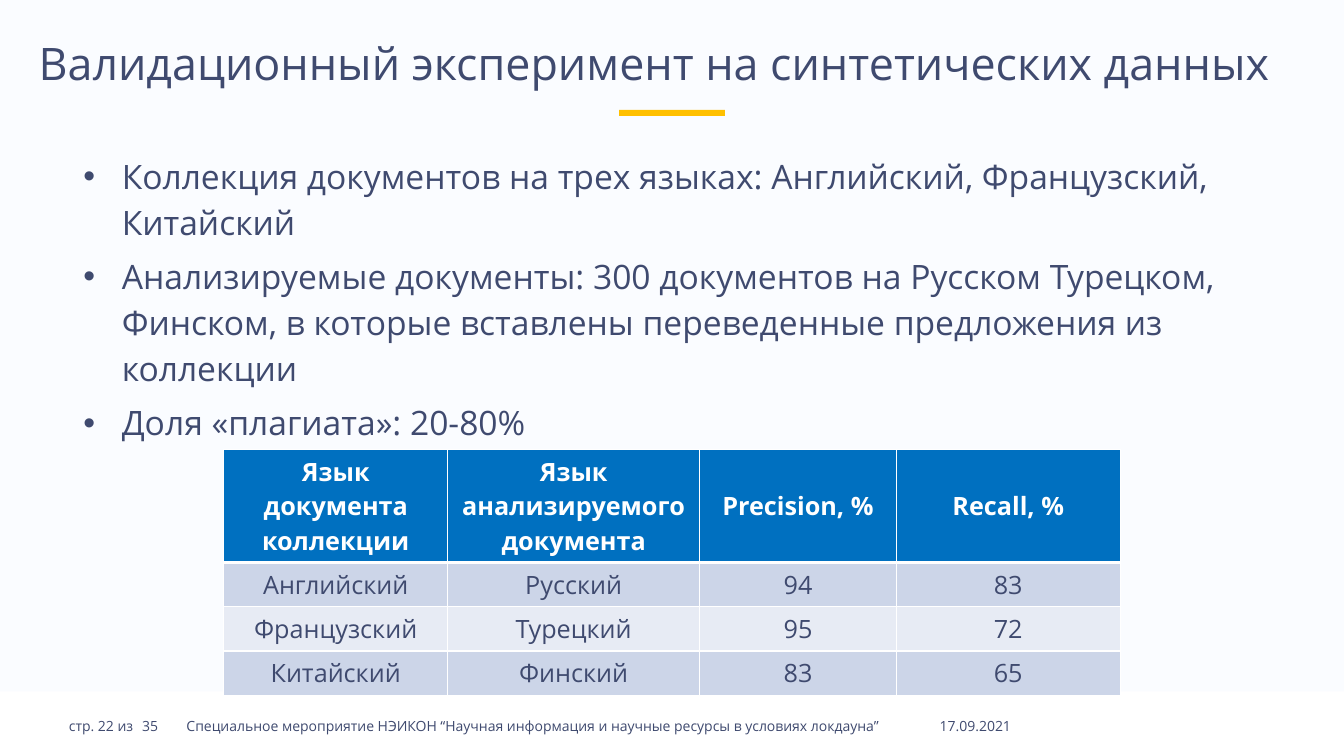
from lxml import etree
from pptx import Presentation
from pptx import util as u
from pptx.dml import color
from pptx.enum import shapes, text
from pptx.oxml import ns

NAVY, WHITE, BLUE, AMBER = "3F4A6F", "FFFFFF", "0070C0", "FFC000"
BACKGROUND, BANDS = "FAFCFF", ("CCD5E8", "E7EBF4")
LEFT, CENTER, RIGHT = text.PP_ALIGN.LEFT, text.PP_ALIGN.CENTER, text.PP_ALIGN.RIGHT
TOP, MIDDLE, BOTTOM = text.MSO_ANCHOR.TOP, text.MSO_ANCHOR.MIDDLE, text.MSO_ANCHOR.BOTTOM


def rgb(value):
    return color.RGBColor.from_string(value)


def add_element(parent, tag, **attributes):
    return etree.SubElement(parent, ns.qn(tag), **attributes)


class SlideBuilder:
    font_name = "Open Sans"

    def __init__(self, slide):
        self.slide = slide
        slide.background.fill.solid()
        slide.background.fill.fore_color.rgb = rgb(BACKGROUND)

    def style(self, paragraph, size, font_color=NAVY, bold=False, align=LEFT):
        paragraph.alignment = align
        font = paragraph.font
        font.name, font.size, font.bold = self.font_name, u.Pt(size), bold
        font.color.rgb = rgb(font_color)

    def bar(self, box, fill):
        shape = self.slide.shapes.add_shape(
            shapes.MSO_SHAPE.RECTANGLE, *map(u.Inches, box))
        shape.shadow.inherit = False
        shape.fill.solid()
        shape.fill.fore_color.rgb = rgb(fill)
        shape.line.fill.background()

    def frame(self, box, anchor, inset=True):
        frame = self.slide.shapes.add_textbox(*map(u.Inches, box)).text_frame
        frame.word_wrap = True
        frame.vertical_anchor = anchor
        if not inset:
            frame.margin_left = frame.margin_right = 0
            frame.margin_top = frame.margin_bottom = 0
        return frame

    def label(self, box, words, size, align=LEFT, anchor=MIDDLE, spacing=1.0, tab=None):
        paragraph = self.frame(box, anchor, inset=False).paragraphs[0]
        paragraph.text = words
        paragraph.line_spacing = spacing
        if tab:
            stops = add_element(paragraph._p.get_or_add_pPr(), "a:tabLst")
            add_element(stops, "a:tab", pos=str(u.Inches(tab)), algn="l")
        self.style(paragraph, size, align=align)

    def bullets(self, box, items, size, indent):
        frame = self.frame(box, TOP)
        for index, item in enumerate(items):
            paragraph = frame.add_paragraph() if index else frame.paragraphs[0]
            paragraph.text = item
            paragraph.line_spacing = 1.14
            paragraph.space_before = u.Pt(6 if index else 0)
            properties = paragraph._p.get_or_add_pPr()
            properties.set("marL", str(u.Inches(indent)))
            properties.set("indent", str(-u.Inches(indent)))
            add_element(properties, "a:buFont", typeface="Arial")
            add_element(properties, "a:buChar", char="•")
            self.style(paragraph, size)

    def borders(self, cell, bottom):
        properties = cell._tc.get_or_add_tcPr()
        for side, width in (("L", 1), ("R", 1), ("T", 1), ("B", bottom)):
            line = add_element(properties, f"a:ln{side}", w=str(u.Pt(width)))
            add_element(add_element(line, "a:solidFill"), "a:srgbClr", val=WHITE)

    def table(self, left, top, widths, header_height, row_height, rows, size):
        heights = [header_height] + [row_height] * (len(rows) - 1)
        table = self.slide.shapes.add_table(
            len(rows), len(widths), u.Inches(left), u.Inches(top),
            u.Inches(sum(widths)), u.Inches(sum(heights))).table
        for column, width in zip(table.columns, widths):
            column.width = u.Inches(width)
        for row, height in zip(table.rows, heights):
            row.height = u.Inches(height)
        for row_index, row in enumerate(rows):
            header = row_index == 0
            for column_index, words in enumerate(row):
                cell = table.cell(row_index, column_index)
                cell.text = words
                cell.vertical_anchor = MIDDLE if header else TOP
                # A thick rule parts the header from the body
                self.borders(cell, 3 if header else 1)
                cell.fill.solid()
                cell.fill.fore_color.rgb = rgb(BLUE if header else BANDS[(row_index - 1) % 2])
                self.style(cell.text_frame.paragraphs[0], size,
                           WHITE if header else NAVY, header, CENTER)


def main():
    presentation = Presentation()
    presentation.slide_width = u.Inches(13.33)
    presentation.slide_height = u.Inches(7.5)
    builder = SlideBuilder(presentation.slides.add_slide(presentation.slide_layouts[6]))

    # Title accent and footer band
    builder.bar((6.14, 1.09, 1.05, 0.06), AMBER)
    builder.bar((0, 6.86, 13.33, 0.64), WHITE)

    # Title
    builder.label((0.13, 0.21, 12.73, 0.68), "Валидационный эксперимент на синтетических данных",
                  32, CENTER, BOTTOM, 0.9)

    # Experiment setup
    builder.bullets((0.73, 1.44, 12.13, 4.76), [
        "Коллекция документов на трех языках: Английский, Французский, Китайский",
        "Анализируемые документы: 300 документов на Русском Турецком, Финском, "
        "в которые вставлены переведенные предложения из коллекции",
        "Доля «плагиата»: 20-80%",
    ], 24, 0.38)

    # Results
    builder.table(2.22, 4.46, (2.22, 2.5, 1.95, 2.22), 1.12, 0.44, [
        ("Язык документа коллекции", "Язык анализируемого документа",
         "Precision, %", "Recall, %"),
        ("Английский", "Русский", "94", "83"),
        ("Французский", "Турецкий", "95", "72"),
        ("Китайский", "Финский", "83", "65"),
    ], 18)

    # Footer
    builder.label((0.13, 7.12, 1.19, 0.17), "стр. 22 из", 10, RIGHT)
    builder.label((1.41, 7.12, 7.66, 0.17),
                  "35\tСпециальное мероприятие НЭИКОН “Научная информация "
                  "и научные ресурсы в условиях локдауна”", 10, tab=0.44)
    builder.label((9.32, 7.12, 1.18, 0.17), "17.09.2021", 10)

    presentation.save("out.pptx")


if __name__ == "__main__":
    main()
